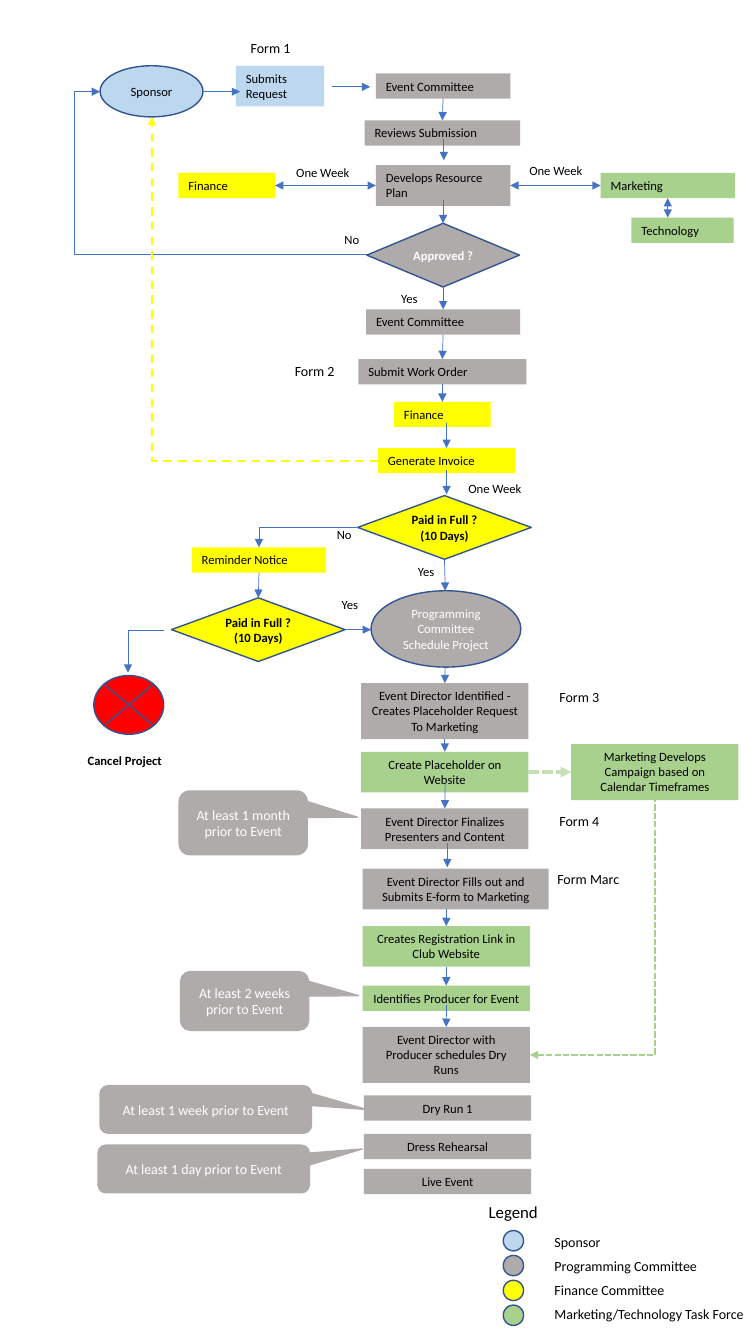
from lxml import etree
from pptx import Presentation
from pptx.dml.color import RGBColor
from pptx.enum import dml, shapes, text
from pptx.oxml import ns
from pptx.util import Pt


class Theme:
    font = "Calibri"
    small, medium, large = 9, 10, 12
    sponsor, programming, finance, marketing = "BDD7EE", "AFABAB", "FFFF00", "A9D18E"
    cancel, outline, arrow, pale_green = "FF0000", "325491", "4472C4", "C5E0B4"
    black, white = "000000", "FFFFFF"


KIND = shapes.MSO_SHAPE
LEFT, CENTER = text.PP_ALIGN.LEFT, text.PP_ALIGN.CENTER
TOP, LEFT_SIDE, BOTTOM, RIGHT_SIDE = range(4)

prs = Presentation()
prs.slide_width, prs.slide_height = Pt(540), Pt(960)
slide = prs.slides.add_slide(prs.slide_layouts[6])


def add_block(kind, bounds, words="", fill=None, outline=None, size=Theme.small,
              color=Theme.black, bold=False, align=CENTER, anchor=text.MSO_ANCHOR.MIDDLE):
    """Add a preset shape, or a text box when kind is None, with its wording."""
    bounds = [Pt(value) for value in bounds]
    if kind is None:
        block = slide.shapes.add_textbox(*bounds)
    else:
        block = slide.shapes.add_shape(kind, *bounds)
        block.shadow.inherit = False
        block.fill.solid()
        block.fill.fore_color.rgb = RGBColor.from_string(fill)
        if outline:
            block.line.color.rgb = RGBColor.from_string(outline)
            block.line.width = Pt(1)
        else:
            block.line.fill.background()
    if words:
        frame = block.text_frame
        frame.text = words
        frame.word_wrap = True
        frame.vertical_anchor = anchor
        for paragraph in frame.paragraphs:
            paragraph.alignment = align
            for run in paragraph.runs:
                run.font.name = Theme.font
                run.font.size = Pt(size)
                run.font.bold = bold
                run.font.color.rgb = RGBColor.from_string(color)
    return block


def add_arrow(start, end, ends=("tailEnd",), color=Theme.arrow, width=0.5, dash=None,
              elbow=None, bend=None):
    """Join two places, each a point or a (step, side) pair."""
    kind = shapes.MSO_CONNECTOR.ELBOW if elbow else shapes.MSO_CONNECTOR.STRAIGHT
    points = [(0, 0) if isinstance(place[0], str) else place for place in (start, end)]
    arrow = slide.shapes.add_connector(kind, *[Pt(v) for point in points for v in point])
    if isinstance(start[0], str):
        arrow.begin_connect(steps[start[0]], start[1])
    if isinstance(end[0], str):
        arrow.end_connect(steps[end[0]], end[1])
    arrow.line.color.rgb = RGBColor.from_string(color)
    arrow.line.width = Pt(width)
    if dash:
        arrow.line.dash_style = dash
    for tip in ends:
        etree.SubElement(arrow.get_or_add_ln(), ns.qn(f"a:{tip}"), type="triangle")
    properties = arrow._element.spPr
    etree.SubElement(properties, ns.qn("a:effectLst"))
    if elbow:
        geometry = properties.find(ns.qn("a:prstGeom"))
        geometry.set("prst", elbow)
        if bend:
            adjusts = geometry.find(ns.qn("a:avLst"))
            if adjusts is None:
                adjusts = etree.SubElement(geometry, ns.qn("a:avLst"))
            etree.SubElement(adjusts, ns.qn("a:gd"), name="adj1", fmla=f"val {bend}")


# Process steps: key, left, top, width, lines of text, committee colour, alignment, wording
line_heights = {1: 18, 2: 29, 3: 40}
steps = {}
for key, left, top, width, lines, fill, align, words in [
    ("request", 168.5, 47, 63, 2, Theme.sponsor, LEFT, "Submits\nRequest"),
    ("committee", 268.5, 52.5, 96, 1, Theme.programming, LEFT, "Event Committee"),
    ("review", 260.5, 86, 111, 1, Theme.programming, LEFT, "Reviews Submission"),
    ("plan", 268.5, 118, 96, 2, Theme.programming, LEFT, "Develops Resource Plan"),
    ("costing", 127.5, 123.5, 69, 1, Theme.finance, LEFT, "Finance"),
    ("marketing", 429, 123.5, 96, 1, Theme.marketing, LEFT, "Marketing"),
    ("technology", 451, 155.5, 73, 1, Theme.marketing, LEFT, "Technology"),
    ("approval", 261.5, 221, 110, 1, Theme.programming, LEFT, "Event Committee"),
    ("order", 256, 256.5, 120, 1, Theme.programming, LEFT, "Submit Work Order"),
    ("finance", 281.5, 287, 69, 1, Theme.finance, LEFT, "Finance"),
    ("invoice", 270, 320, 98, 1, Theme.finance, LEFT, "Generate Invoice"),
    ("reminder", 137, 391, 96, 1, Theme.finance, LEFT, "Reminder Notice"),
    ("director", 258, 488, 119.5, 3, Theme.programming, CENTER,
     "Event Director Identified - Creates Placeholder Request\nTo Marketing"),
    ("placeholder", 258, 537, 119.5, 2, Theme.marketing, CENTER, "Create Placeholder on Website"),
    ("campaign", 408, 531.5, 119.5, 3, Theme.marketing, CENTER,
     "Marketing Develops Campaign based on Calendar Timeframes"),
    ("content", 258, 577.5, 119.5, 2, Theme.programming, CENTER,
     "Event Director Finalizes Presenters and Content"),
    ("eform", 259, 620.5, 133, 2, Theme.programming, CENTER,
     "Event Director Fills out and Submits E-form to Marketing"),
    ("registration", 259, 661.5, 119.5, 2, Theme.marketing, CENTER,
     "Creates Registration Link in Club Website"),
    ("producer", 259, 704, 119.5, 1, Theme.marketing, CENTER, "Identifies Producer for Event"),
    ("schedule", 259, 733.5, 119.5, 3, Theme.programming, CENTER,
     "Event Director with Producer schedules Dry Runs"),
    ("dry run", 260, 782.5, 119.5, 1, Theme.programming, CENTER, "Dry Run 1"),
    ("rehearsal", 260, 810, 119.5, 1, Theme.programming, CENTER, "Dress Rehearsal"),
    ("live", 260, 835, 119.5, 1, Theme.programming, CENTER, "Live Event"),
]:
    steps[key] = add_block(KIND.RECTANGLE, (left, top, width, line_heights[lines]), words, fill,
                           align=align, anchor=text.MSO_ANCHOR.TOP)

# Outlined steps: decisions, start and end
for key, kind, bounds, fill, color, bold, words in [
    ("sponsor", KIND.OVAL, (71.5, 47, 73.5, 36.5), Theme.sponsor, Theme.black, False, "Sponsor"),
    ("approved", KIND.FLOWCHART_DECISION, (262, 159.5, 109, 45.5), Theme.programming,
     Theme.white, True, "Approved ?"),
    ("paid", KIND.FLOWCHART_DECISION, (255.5, 354, 124, 45.5), Theme.finance,
     Theme.black, True, "Paid in Full ?\n(10 Days)"),
    ("paid late", KIND.FLOWCHART_DECISION, (122.5, 427, 124, 45.5), Theme.finance,
     Theme.black, True, "Paid in Full ?\n(10 Days)"),
    ("project", KIND.FLOWCHART_CONNECTOR, (265, 422, 107, 54.5), Theme.programming,
     Theme.white, False, "Programming Committee Schedule Project"),
    ("cancel", KIND.FLOWCHART_SUMMING_JUNCTION, (67, 482.5, 50, 42), Theme.cancel,
     Theme.black, False, ""),
]:
    steps[key] = add_block(kind, bounds, words, fill, Theme.outline, color=color, bold=bold)
    if kind != KIND.FLOWCHART_CONNECTOR:
        frame = steps[key].text_frame
        frame.margin_left = frame.margin_right = Pt(4)
        frame.margin_top = frame.margin_bottom = Pt(2)

# Deadlines
for bounds, tip, words in [
    ((128, 565, 91.5, 45.5), (0.89, -0.09), "At least 1 month prior to Event"),
    ((129, 694, 91.5, 42), (0.89, -0.09), "At least 2 weeks prior to Event"),
    ((71.5, 775.5, 151, 34), (0.76, 0), "At least 1 week prior to Event"),
    ((70, 818, 151, 34), (0.75, -0.42), "At least 1 day prior to Event"),
]:
    deadline = add_block(KIND.ROUNDED_RECTANGULAR_CALLOUT, bounds, words, Theme.programming,
                         Theme.programming, Theme.medium, Theme.white)
    deadline.adjustments[0], deadline.adjustments[1] = tip

# Answers, durations and form names
for left, top, words, size, bold in [
    (239, 162, "No", Theme.small, False),
    (233.5, 373, "No", Theme.small, False),
    (279.5, 204.5, "Yes", Theme.small, False),
    (291.5, 399.5, "Yes", Theme.small, False),
    (237, 422.5, "Yes", Theme.small, False),
    (204.5, 114, "One Week", Theme.small, False),
    (371, 113, "One Week", Theme.small, False),
    (327.5, 340, "One Week", Theme.small, False),
    (55.5, 534, "Cancel Project", Theme.small, True),
    (172, 24.5, "Form 1", Theme.medium, False),
    (203.5, 255.5, "Form 2", Theme.medium, False),
    (392.5, 488, "Form 3", Theme.medium, False),
    (392.5, 577, "Form 4", Theme.medium, False),
    (391, 618.5, "Form Marc", Theme.medium, False),
    (342, 855, "Legend", Theme.large, False),
]:
    add_block(None, (left, top, 80, 2 * size), words, size=size, bold=bold,
              align=LEFT, anchor=text.MSO_ANCHOR.TOP)

for row, (fill, words) in enumerate([
    (Theme.sponsor, "Sponsor"),
    (Theme.programming, "Programming Committee"),
    (Theme.finance, "Finance Committee"),
    (Theme.marketing, "Marketing/Technology Task Force"),
]):
    add_block(KIND.OVAL, (359.5, 879 + 17.75 * row, 14.5, 14.5), "", fill, Theme.outline)
    add_block(None, (389, 877.5 + 17.2 * row, 153, 19), words, size=Theme.medium,
              align=LEFT, anchor=text.MSO_ANCHOR.TOP)

# Flow between steps
for start, end in [
    ((145, 65.5), (171.5, 65.5)),
    ((237.5, 62), (264.5, 62)),
    (("committee", BOTTOM), ("review", TOP)),
    ((317, 99.5), (317, 114.5)),
    ((316.5, 143), ("approved", TOP)),
    (("approved", BOTTOM), ("approval", TOP)),
    (("approval", BOTTOM), ("order", TOP)),
    (("order", BOTTOM), ("finance", TOP)),
    ((319, 302), ("invoice", TOP)),
    ((319, 336), (319, 353)),
    (("paid", BOTTOM), (318, 422)),
    (("reminder", BOTTOM), ("paid late", TOP)),
    (("paid late", RIGHT_SIDE), (265, 449.75)),
    ((318, 476.5), ("director", TOP)),
    (("director", BOTTOM), ("placeholder", TOP)),
    ((318, 558.5), ("content", TOP)),
    ((319.5, 602.5), (319.5, 619.5)),
    ((319, 649.5), ("registration", TOP)),
    (("registration", BOTTOM), ("producer", TOP)),
    ((319, 718), ("schedule", TOP)),
]:
    add_arrow(start, end)

for start, end in [
    (("costing", RIGHT_SIDE), ("plan", LEFT_SIDE)),
    (("plan", RIGHT_SIDE), ("marketing", LEFT_SIDE)),
    (("marketing", BOTTOM), (477, 155.5)),
]:
    add_arrow(start, end, ends=("headEnd", "tailEnd"))

add_arrow(("placeholder", RIGHT_SIDE), ("campaign", LEFT_SIDE), color=Theme.pale_green,
          width=2.5, dash=dml.MSO_LINE.SQUARE_DOT)
add_arrow((262, 182), (71.5, 65.5), elbow="bentConnector3", bend=109500)
add_arrow((255.5, 377), (185, 391), elbow="bentConnector2")
add_arrow((117, 450), (91.5, 480.5), elbow="bentConnector2")
add_arrow((270, 329), (108.5, 83.5), color=Theme.finance, width=1.5,
          dash=dml.MSO_LINE.DASH, elbow="bentConnector2")
add_arrow((378.5, 753.5), (468, 571.5), ends=("headEnd",), color=Theme.marketing, width=1.5,
          dash=dml.MSO_LINE.SQUARE_DOT, elbow="bentConnector2")

prs.save("out.pptx")
